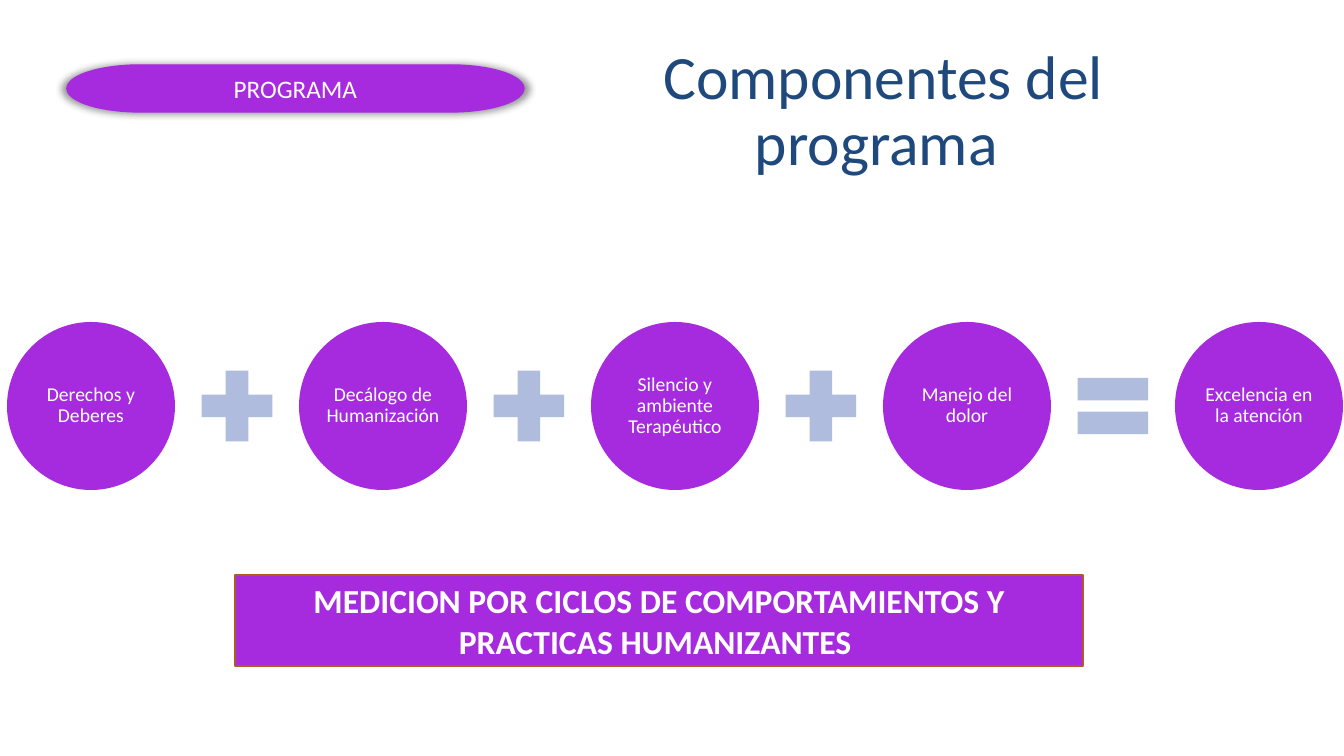
from lxml import etree
from pptx import Presentation
from pptx.dml.color import RGBColor
from pptx.enum.shapes import MSO_SHAPE
from pptx.enum.text import MSO_ANCHOR, PP_ALIGN
from pptx.oxml import parse_xml
from pptx.oxml.ns import nsdecls, qn
from pptx.util import Pt

PX = 914400 / 100.8
COLORS = {"purple": "A62ADE", "lilac": "B0BCDE", "navy": "1F497D",
          "brown": "AF5C24", "white": "FFFFFF"}


def add_block(preset, left, top, width, height, fill, line=None):
    block = slide.shapes.add_shape(
        preset, *(round(v * PX) for v in (left, top, width, height)))
    block.shadow.inherit = False
    block.fill.solid()
    block.fill.fore_color.rgb = RGBColor.from_string(COLORS[fill])
    if line:
        block.line.color.rgb = RGBColor.from_string(COLORS[line])
        block.line.width = Pt(1)
    else:
        block.line.fill.background()
    return block


def write(shape, text, size, color="white", bold=False, spacing=None):
    """Put one centred, wrapped paragraph in the middle of the shape."""
    frame = shape.text_frame
    frame.word_wrap = True
    frame.vertical_anchor = MSO_ANCHOR.MIDDLE
    paragraph = frame.paragraphs[0]
    paragraph.text = text
    paragraph.alignment = PP_ALIGN.CENTER
    paragraph.line_spacing = spacing
    font = paragraph.runs[0].font
    font.name = "Calibri"
    font.size = Pt(size)
    font.bold = bold
    font.color.rgb = RGBColor.from_string(COLORS[color])


prs = Presentation()
prs.slide_width = round(1344 * PX)
prs.slide_height = round(756 * PX)
slide = prs.slides.add_slide(prs.slide_layouts[6])

# Section label with a soft shadow all around
section = add_block(MSO_SHAPE.FLOWCHART_TERMINATOR, 67, 65, 457, 47, "purple", "purple")
write(section, "PROGRAMA", 18)
section_effects = section._element.spPr.find(qn("a:effectLst"))
section_effects.append(parse_xml(
    f'<a:outerShdw {nsdecls("a")} blurRad="63500" sx="102000" sy="102000" '
    'algn="ctr" rotWithShape="0"><a:srgbClr val="000000">'
    '<a:alpha val="40000"/></a:srgbClr></a:outerShdw>'))

# Equation: four components add up to excellence
components = ["Derechos y Deberes", "Decálogo de Humanización ",
              "Silencio y ambiente Terapéutico", "Manejo del dolor",
              "Excelencia en la atención"]
operators = [MSO_SHAPE.MATH_PLUS] * 3 + [MSO_SHAPE.MATH_EQUAL]
FIRST_LEFT, PITCH, CENTER_Y = 7, 292, 406
CIRCLE, OPERATOR = 168, 96
operator_gap = (PITCH - CIRCLE - OPERATOR) // 2

for i, component in enumerate(components):
    left = FIRST_LEFT + i * PITCH
    circle = add_block(MSO_SHAPE.OVAL, left, CENTER_Y - CIRCLE // 2, CIRCLE, CIRCLE, "purple")
    frame = circle.text_frame
    frame.margin_left = frame.margin_right = round(2 * PX)
    frame.margin_top = frame.margin_bottom = round(2 * PX)
    write(circle, component, 14, spacing=0.9)
    if i < len(operators):
        add_block(operators[i], left + CIRCLE + operator_gap, CENTER_Y - OPERATOR // 2,
                  OPERATOR, OPERATOR, "lilac")

title = slide.shapes.add_textbox(*(round(v * PX) for v in (594, 106, 579, 13)))
write(title, "Componentes del programa ", 44, "navy", spacing=0.9)

measurement = add_block(MSO_SHAPE.RECTANGLE, 235, 575, 848, 91, "purple", "brown")
write(measurement, "MEDICION POR CICLOS DE COMPORTAMIENTOS Y PRACTICAS HUMANIZANTES ",
      24, bold=True)

prs.save("out.pptx")
